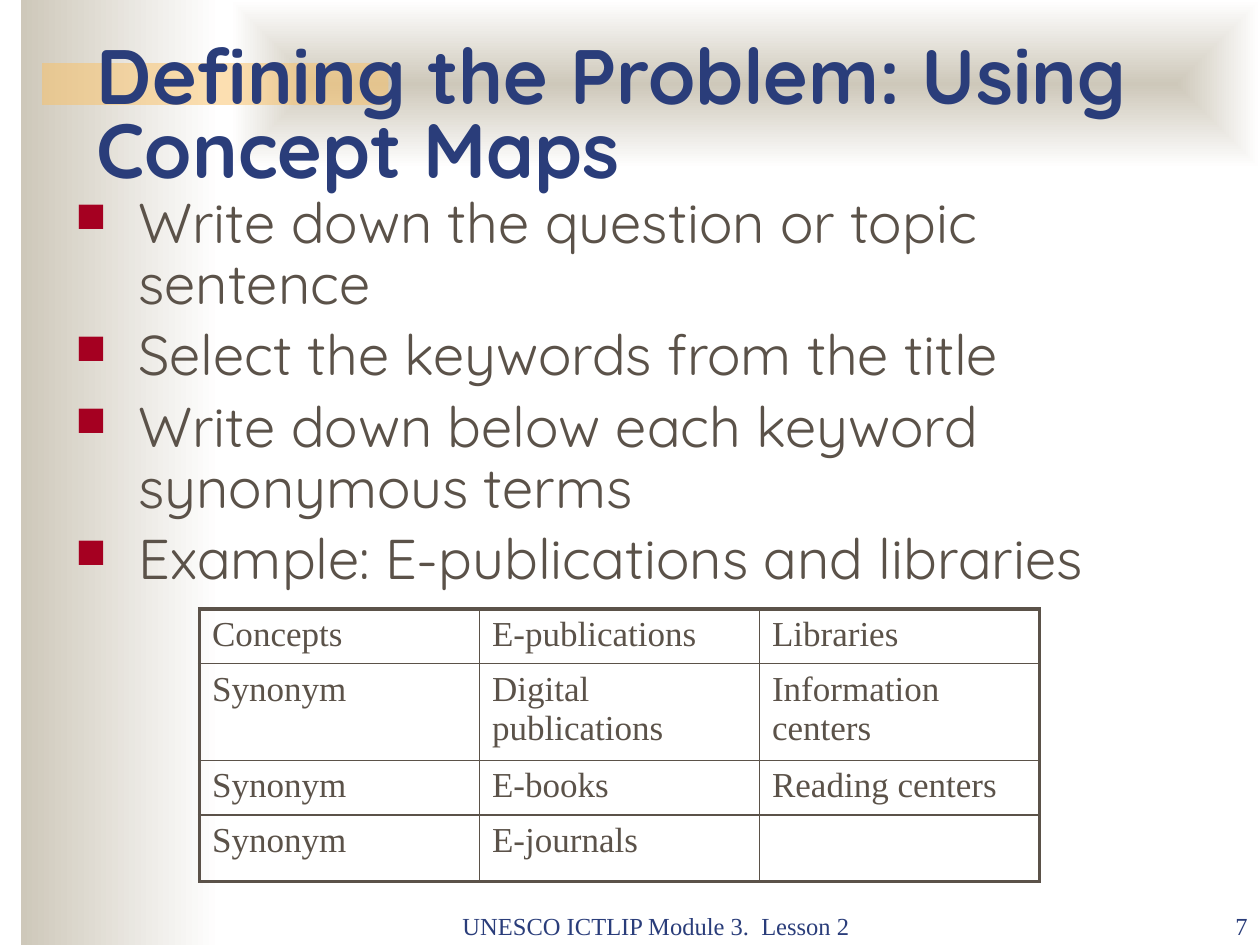
import pptx
import pptx.dml.color
import pptx.enum.shapes
import pptx.enum.text
import pptx.oxml
import pptx.oxml.ns
import pptx.util
from lxml import etree

Pt = pptx.util.Pt
ALIGN = pptx.enum.text.PP_ALIGN
ANCHOR = pptx.enum.text.MSO_ANCHOR

# Content
TITLE = "Defining the Problem: Using Concept Maps"
BULLETS = [
    "Write down the question or topic sentence",
    "Select the keywords from the title",
    "Write down below each keyword synonymous terms",
    "Example: E-publications and libraries",
]
CONCEPTS = [
    ("Concepts", "E-publications", "Libraries"),
    ("Synonym", "Digital publications", "Information centers"),
    ("Synonym", "E-books", "Reading centers"),
    ("Synonym", "E-journals", ""),
]
FOOTER = "UNESCO ICTLIP Module 3.  Lesson 2"
PAGE_NUMBER = "7"

# Style
NAVY, BROWN, RED = "2A3D7A", "5B5249", "A50021"
SAND, WHITE, AMBER = "CEC8BA", "FFFFFF", "FAC164"
SANS, SERIF = "Quicksand", "Times New Roman"
COLUMN_WIDTH = 160
ROW_HEIGHTS = [29.4, 51.6, 29.4, 38]
THIN, THICK = 1, 2.25


def rgb(color):
    return pptx.dml.color.RGBColor.from_string(color)


def add_child(parent, tag, **attributes):
    child = etree.SubElement(parent, pptx.oxml.ns.qn(tag))
    for name, value in attributes.items():
        child.set(name, str(value))
    return child


def format_font(paragraph, font_name, size, color, bold=False):
    for run in paragraph.runs:
        run.font.name = font_name
        run.font.size = Pt(size)
        run.font.bold = bold
        run.font.color.rgb = rgb(color)


def add_band(slide, left, top, width, height):
    shape = slide.shapes.add_shape(
        pptx.enum.shapes.MSO_SHAPE.RECTANGLE, Pt(left), Pt(top), Pt(width), Pt(height))
    shape.shadow.inherit = False
    shape.line.fill.background()
    return shape


def fill_gradient(shape):
    shape.fill.gradient()
    shape.fill.gradient_angle = 0
    for stop, color in zip(shape.fill.gradient_stops, (SAND, WHITE)):
        stop.color.rgb = rgb(color)


def add_text_box(slide, left, top, width, height):
    box = slide.shapes.add_textbox(Pt(left), Pt(top), Pt(width), Pt(height))
    box.text_frame.word_wrap = True
    return box.text_frame


def add_footer(slide, text, left, width, alignment):
    frame = add_text_box(slide, left, 504.7, width, 36)
    frame.vertical_anchor = ANCHOR.BOTTOM
    frame.text = text
    frame.paragraphs[0].alignment = alignment
    format_font(frame.paragraphs[0], SERIF, 14, NAVY)


def add_bullet(paragraph):
    properties = paragraph._p.get_or_add_pPr()
    properties.set("marL", str(Pt(36)))
    properties.set("indent", str(-Pt(36)))
    add_child(add_child(properties, "a:buClr"), "a:srgbClr", val=RED)
    add_child(properties, "a:buSzPct", val=75000)
    add_child(properties, "a:buChar", char="■")


def set_borders(cell, widths):
    properties = cell._tc.get_or_add_tcPr()
    for position, (side, width) in enumerate(widths.items()):
        line = pptx.oxml.parse_xml(
            f'<a:{side} {pptx.oxml.ns.nsdecls("a")} w="{Pt(width)}"><a:solidFill>'
            f'<a:srgbClr val="{BROWN}"/></a:solidFill></a:{side}>')
        properties.insert(position, line)


def build_background(slide):
    fill_gradient(add_band(slide, 12, 0, 114, 540))

    # The top band fades from its centre outwards
    top_band = add_band(slide, 132, 0, 588, 96)
    fill_gradient(top_band)
    linear = top_band._element.spPr.find(".//" + pptx.oxml.ns.qn("a:lin"))
    gradient = linear.getparent()
    gradient.remove(linear)
    center = add_child(gradient, "a:path", path="shape")
    add_child(center, "a:fillToRect", l=50000, t=50000, r=50000, b=50000)

    accent = add_band(slide, 24, 36, 198, 24)
    accent.fill.solid()
    accent.fill.fore_color.rgb = rgb(AMBER)
    color = accent._element.spPr.find(".//" + pptx.oxml.ns.qn("a:srgbClr"))
    add_child(color, "a:alpha", val=50000)


def build_title(slide):
    title = slide.shapes.title
    title.left, title.top, title.width, title.height = Pt(48), Pt(24), Pt(612), Pt(90)
    frame = title.text_frame
    frame.text = TITLE
    frame.word_wrap = True
    frame.auto_size = pptx.enum.text.MSO_AUTO_SIZE.NONE
    frame.vertical_anchor = ANCHOR.BOTTOM
    paragraph = frame.paragraphs[0]
    paragraph.alignment = ALIGN.LEFT
    paragraph.line_spacing = 0.8
    format_font(paragraph, SANS, 44, NAVY, bold=True)


def build_bullets(slide):
    frame = add_text_box(slide, 36, 108, 642, 240)
    for index, text in enumerate(BULLETS):
        paragraph = frame.add_paragraph() if index else frame.paragraphs[0]
        paragraph.text = text
        paragraph.line_spacing = 0.9
        paragraph.space_before = Pt(6.4 if index else 0)
        add_bullet(paragraph)
        format_font(paragraph, SANS, 32, BROWN)


def build_table(slide):
    row_count, column_count = len(CONCEPTS), len(CONCEPTS[0])
    table = slide.shapes.add_table(
        row_count, column_count, Pt(114), Pt(348),
        Pt(COLUMN_WIDTH * column_count), Pt(sum(ROW_HEIGHTS))).table
    table.first_row = table.horz_banding = False
    for column in table.columns:
        column.width = Pt(COLUMN_WIDTH)
    for row_index, texts in enumerate(CONCEPTS):
        table.rows[row_index].height = Pt(ROW_HEIGHTS[row_index])
        for column_index, text in enumerate(texts):
            cell = table.cell(row_index, column_index)
            cell.text = text
            cell.fill.background()
            format_font(cell.text_frame.paragraphs[0], SERIF, 20, BROWN)
            # Outer edges are thick, inner ones thin
            outer = {
                "lnL": column_index == 0,
                "lnR": column_index == column_count - 1,
                "lnT": row_index == 0,
                "lnB": row_index == row_count - 1,
            }
            set_borders(cell, {side: THICK if edge else THIN for side, edge in outer.items()})


def main():
    presentation = pptx.Presentation()
    presentation.slide_width, presentation.slide_height = Pt(720), Pt(540)
    slide = presentation.slides.add_slide(presentation.slide_layouts[5])
    slide.background.fill.solid()
    slide.background.fill.fore_color.rgb = rgb(WHITE)

    build_background(slide)
    # Bring the title in front of the background bands
    slide.shapes._spTree.append(slide.shapes.title._element)
    build_title(slide)
    build_bullets(slide)
    build_table(slide)
    add_footer(slide, FOOTER, 252, 246, ALIGN.CENTER)
    add_footer(slide, PAGE_NUMBER, 648, 72, ALIGN.RIGHT)
    presentation.save("out.pptx")


if __name__ == "__main__":
    main()
